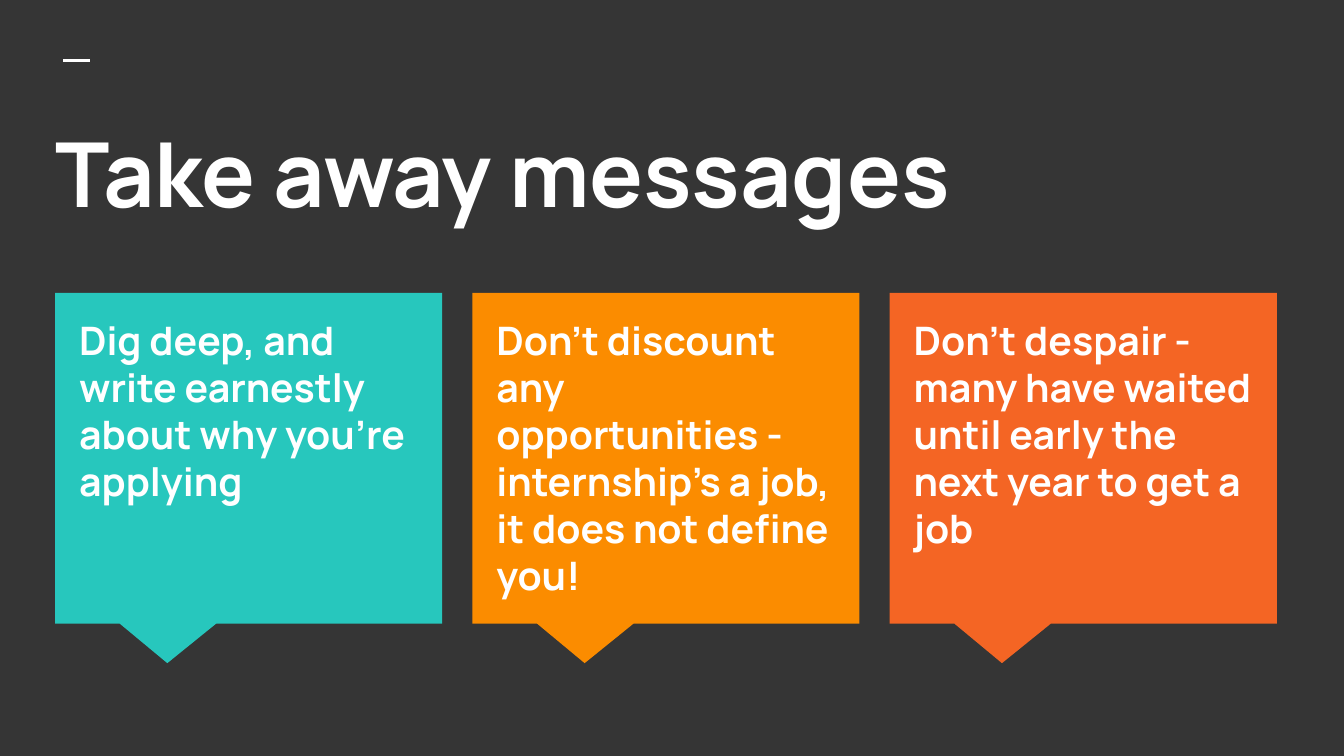
"""Build the take away messages slide with three callouts."""
import pptx
import pptx.dml.color
import pptx.enum.shapes
import pptx.enum.text
import pptx.oxml
import pptx.util
from pptx.util import Inches

COLOURS = {"background": "353535", "white": "FFFFFF", "teal": "27C7BD",
           "amber": "FB8C00", "orange": "F46524"}
FONT = "Manrope"
TITLE = "Take away messages"
MESSAGES = [
    ("Dig deep, and write earnestly about why you’re applying", "teal"),
    ("Don’t discount any opportunities - internship’s a job, it does not define you!", "amber"),
    ("Don’t despair - many have waited until early the next year to get a job", "orange"),
]
LEFT, LAST_LEFT, TOP, WIDTH, HEIGHT = 0.41, 6.62, 2.18, 2.88, 2.46
STEP = (LAST_LEFT - LEFT) / (len(MESSAGES) - 1)
PAD_X, PAD_Y, TEXT_WIDTH, TEXT_HEIGHT = 0.08, 0.07, 2.71, 2.19


def colour(name):
    """Return the named colour."""
    return pptx.dml.color.RGBColor.from_string(COLOURS[name])


def write(sp, text, size=21, bold=True, fill="white"):
    """Put formatted text at the top left of a shape."""
    tf = sp.text_frame
    tf.word_wrap = True
    tf.auto_size = pptx.enum.text.MSO_AUTO_SIZE.NONE
    tf.vertical_anchor = pptx.enum.text.MSO_ANCHOR.TOP
    tf.margin_left = tf.margin_right = Inches(0.1)
    tf.margin_top = tf.margin_bottom = Inches(0.1)
    p = tf.paragraphs[0]
    p.alignment = pptx.enum.text.PP_ALIGN.LEFT
    p.line_spacing = 1.0
    p.space_before = pptx.util.Pt(0)
    r = p.add_run()
    r.text = text
    r.font.name = FONT
    r.font.size = pptx.util.Pt(size)
    r.font.bold = bold
    r.font.color.rgb = colour(fill)


def add_callout(s, left, fill):
    """Add a callout whose tip points down."""
    sp = s.shapes.add_shape(pptx.enum.shapes.MSO_SHAPE.RECTANGULAR_CALLOUT,
                            Inches(left), Inches(TOP), Inches(WIDTH), Inches(HEIGHT))
    sp.adjustments[0] = -0.21
    sp.adjustments[1] = 0.62
    sp.shadow.inherit = False
    sp.fill.solid()
    sp.fill.fore_color.rgb = colour(fill)
    sp.line.fill.background()


def add_dash(s):
    """Add the short line above the title."""
    line = s.shapes.add_connector(pptx.enum.shapes.MSO_CONNECTOR.STRAIGHT,
                                  Inches(0.47), Inches(0.45), Inches(0.67), Inches(0.45))
    line.line.color.rgb = colour("white")
    line.line.width = pptx.util.Pt(1.5)
    line._element.spPr.append(pptx.oxml.parse_xml(
        '<a:effectLst xmlns:a="http://schemas.openxmlformats.org/drawingml/2006/main"/>'))


def main():
    """Build and save the slide."""
    prs = pptx.Presentation()
    prs.slide_width, prs.slide_height = Inches(10), Inches(10 * 9 / 16)
    s = prs.slides.add_slide(prs.slide_layouts[5])
    s.background.fill.solid()
    s.background.fill.fore_color.rgb = colour("background")
    add_dash(s)
    title = s.shapes.title
    title.left, title.top = Inches(0.31), Inches(0.78)
    title.width, title.height = Inches(9.43), Inches(1.12)
    write(title, TITLE, size=48)
    for i, (text, fill) in enumerate(MESSAGES):
        left = LEFT + i * STEP
        add_callout(s, left, fill)
        sp = s.shapes.add_textbox(Inches(left + PAD_X), Inches(TOP + PAD_Y),
                                  Inches(TEXT_WIDTH), Inches(TEXT_HEIGHT))
        write(sp, text)
    prs.save("out.pptx")


if __name__ == "__main__":
    main()
